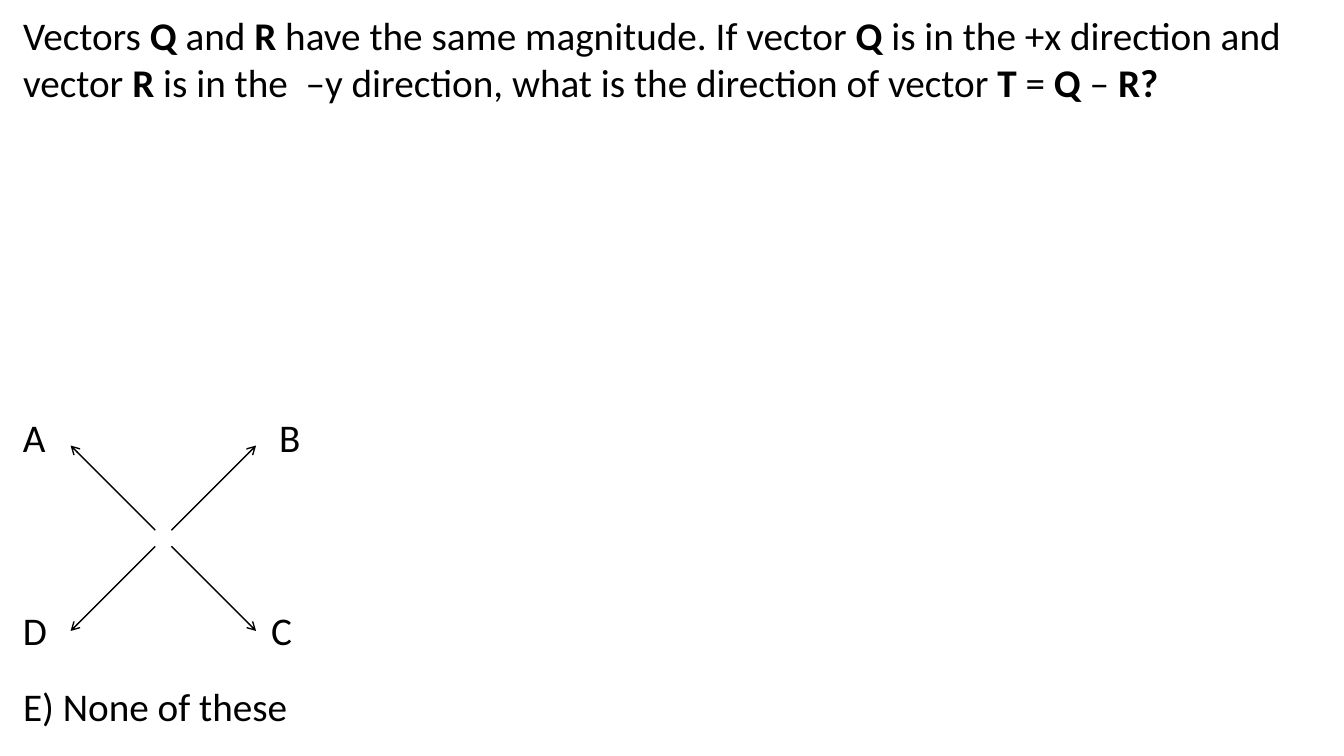
from lxml import etree
from pptx import Presentation
from pptx import util as u
from pptx.dml.color import RGBColor
from pptx.enum import shapes, text
from pptx.oxml.ns import qn

PX = 9144
INK = {"black": "000000", "white": "FFFFFF"}
FONT = "Calibri"

deck = Presentation()
deck.slide_width, deck.slide_height = 1333 * PX, 750 * PX
slide = deck.slides.add_slide(deck.slide_layouts[6])
slide.background.fill.solid()
slide.background.fill.fore_color.rgb = RGBColor.from_string(INK["white"])


def write(x, y, w, h, runs, wrap=False):
    box = slide.shapes.add_textbox(x * PX, y * PX, w * PX, h * PX)
    frame = box.text_frame
    frame.word_wrap = wrap
    frame.auto_size = text.MSO_AUTO_SIZE.SHAPE_TO_FIT_TEXT
    for words, bold in runs:
        run = frame.paragraphs[0].add_run()
        run.text = words
        run.font.name = FONT
        run.font.size = u.Pt(28)
        run.font.bold = bold
        run.font.color.rgb = RGBColor.from_string(INK["black"])


write(13, 6, 1305, 104, [
    ("Vectors ", False), ("Q", True), (" and ", False), ("R", True),
    (" have the same magnitude. If vector ", False), ("Q", True),
    (" is in the +x direction and vector ", False), ("R", True),
    (" is in the  –y direction, what is the direction of vector ", False),
    ("T", True), (" = ", False), ("Q ", True), ("– ", False), ("R?", True),
], wrap=True)

mid_x, mid_y = 162, 534
near, far = 8, 92
for right, down in [(1, -1), (1, 1), (-1, -1), (-1, 1)]:
    ends = [(mid_x + right * gap, mid_y + down * gap) for gap in (near, far)]
    arrow = slide.shapes.add_connector(
        shapes.MSO_CONNECTOR.STRAIGHT, *[v * PX for end in ends for v in end])
    arrow.line.width = u.Pt(1)
    arrow.line.color.rgb = RGBColor.from_string(INK["black"])
    line = arrow.line._get_or_add_ln()
    etree.SubElement(line, qn("a:tailEnd"), type="arrow")
    etree.SubElement(arrow._element.spPr, qn("a:effectLst"))

for label, x, y, w in [
    ("A", 13, 405, 43),
    ("B", 267, 405, 42),
    ("C", 259, 597, 41),
    ("D", 13, 597, 44),
    ("E) None of these", 13, 672, 285),
]:
    write(x, y, w, 57, [(label, False)])

deck.save("out.pptx")
